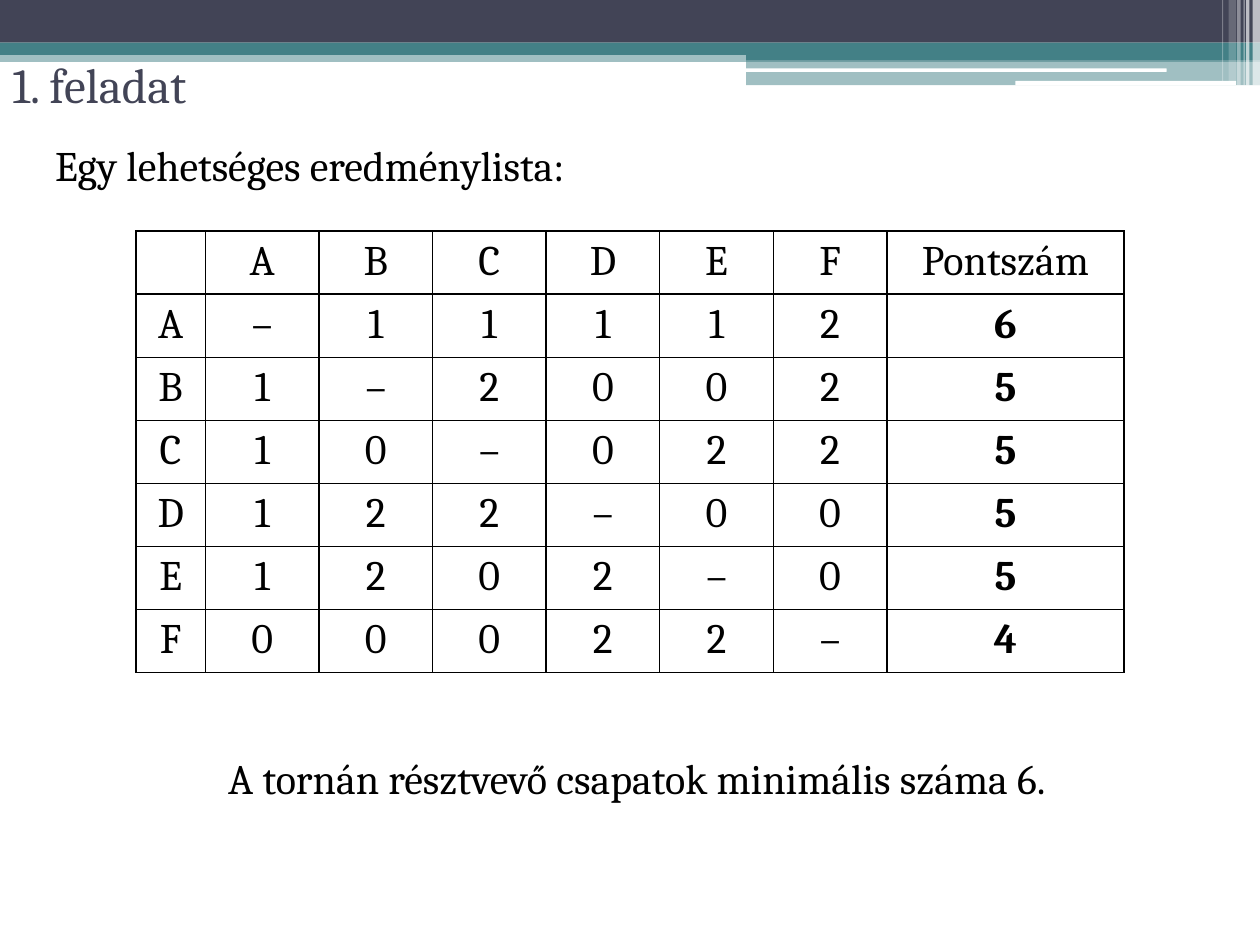
from lxml import etree
from pptx import Presentation
from pptx.dml.color import RGBColor
from pptx.enum.shapes import MSO_SHAPE
from pptx.enum.text import MSO_ANCHOR, PP_ALIGN
from pptx.oxml.ns import qn
from pptx.util import Cm, Pt

RECT = MSO_SHAPE.RECTANGLE
ROUND = MSO_SHAPE.ROUNDED_RECTANGLE
LEFT, MID = PP_ALIGN.LEFT, PP_ALIGN.CENTER
TOP, CENTER = MSO_ANCHOR.TOP, MSO_ANCHOR.MIDDLE
FONT = "Cambria"
DARK, TEAL, WHITE, BLACK = "424456", "438086", "FFFFFF", "000000"

BANDS = [
    (0, 1.02, 25.4, 0.23, TEAL, 50),
    (0, 0, 25.4, 0.86, DARK, 100),
    (0, 0.86, 25.4, 0.25, TEAL, 100),
    (15.04, 0.99, 10.36, 0.23, TEAL, 100),
    (15.04, 1.22, 10.36, 0.5, TEAL, 50),
]
PILLS = [(15.01, 1.38, 8.51, 0.07), (20.47, 1.63, 4.45, 0.09)]
STRIPES = [
    (25.25, 0.15, 1.73, 65),
    (25.12, 0.07, 1.73, 65),
    (25.07, 0.02, 1.73, 60),
    (24.94, 0.07, 1.73, 40),
    (24.77, 0.15, 1.63, 20),
    (24.64, 0.02, 1.63, 30),
]
TEAMS = "ABCDEF"
SCORES = ["–11112", "1–2002", "10–022", "122–00", "1202–0", "00022–"]


def color(code):
    return RGBColor.from_string(code)


def bar(slide, x, y, w, h, code, alpha=100, kind=RECT):
    shape = slide.shapes.add_shape(kind, Cm(x), Cm(y), Cm(w), Cm(h))
    shape.shadow.inherit = False
    shape.line.fill.background()
    shape.fill.solid()
    shape.fill.fore_color.rgb = color(code)
    if alpha < 100:
        clr = shape.fill._xPr.find(".//" + qn("a:srgbClr"))
        etree.SubElement(clr, qn("a:alpha"), val=str(alpha * 1000))


def style(frame, size, code=BLACK, align=LEFT, bold=False):
    para = frame.paragraphs[0]
    para.alignment = align
    for run in para.runs:
        font = run.font
        font.name, font.size, font.bold = FONT, Pt(size), bold
        font.color.rgb = color(code)


def label(slide, text, x, y, w, h, size, code=BLACK, align=LEFT, anchor=TOP):
    frame = slide.shapes.add_textbox(Cm(x), Cm(y), Cm(w), Cm(h)).text_frame
    frame.word_wrap = True
    frame.vertical_anchor = anchor
    frame.text = text
    style(frame, size, code, align)


def border(cell):
    props = cell._tc.get_or_add_tcPr()
    for i, side in enumerate(("a:lnL", "a:lnR", "a:lnT", "a:lnB")):
        line = etree.Element(qn(side), w=str(Pt(1)))
        fill = etree.SubElement(line, qn("a:solidFill"))
        etree.SubElement(fill, qn("a:srgbClr"), val=BLACK)
        props.insert(i, line)


def points(row):
    return str(sum(int(mark) for mark in row if mark != "–"))


def grid(slide):
    rows = [["", *TEAMS, "Pontszám"]]
    rows += [[team, *row, points(row)] for team, row in zip(TEAMS, SCORES)]
    widths = [1.4] + [2.29] * len(TEAMS) + [4.78]
    table = slide.shapes.add_table(
        len(rows), len(widths), Cm(2.74), Cm(4.66),
        Cm(sum(widths)), Cm(1.23 * len(rows))).table
    for col, width in zip(table.columns, widths):
        col.width = Cm(width)
    for r, row in enumerate(rows):
        for c, text in enumerate(row):
            cell = table.cell(r, c)
            cell.text_frame.text = text
            last = c == len(row) - 1
            style(cell.text_frame, 24, align=MID, bold=r > 0 and last)
            cell.fill.background()
            border(cell)


def main():
    deck = Presentation()
    deck.slide_width, deck.slide_height = Cm(25.4), Cm(19.05)
    slide = deck.slides.add_slide(deck.slide_layouts[6])
    for band in BANDS:
        bar(slide, *band)
    for pill in PILLS:
        bar(slide, *pill, WHITE, kind=ROUND)
    for x, w, h, alpha in STRIPES:
        bar(slide, x, 0, w, h, WHITE, alpha)
    label(slide, "1. feladat", 0, 0.71, 15.06, 1.98, 28, DARK, anchor=CENTER)
    label(slide, "Egy lehetséges eredménylista:", 0.86, 2.69, 23.96, 1.23, 24)
    label(slide, "A tornán résztvevő csapatok minimális száma 6.",
          0.86, 15.05, 23.96, 1.23, 24, align=MID)
    grid(slide)
    deck.save("out.pptx")


if __name__ == "__main__":
    main()
